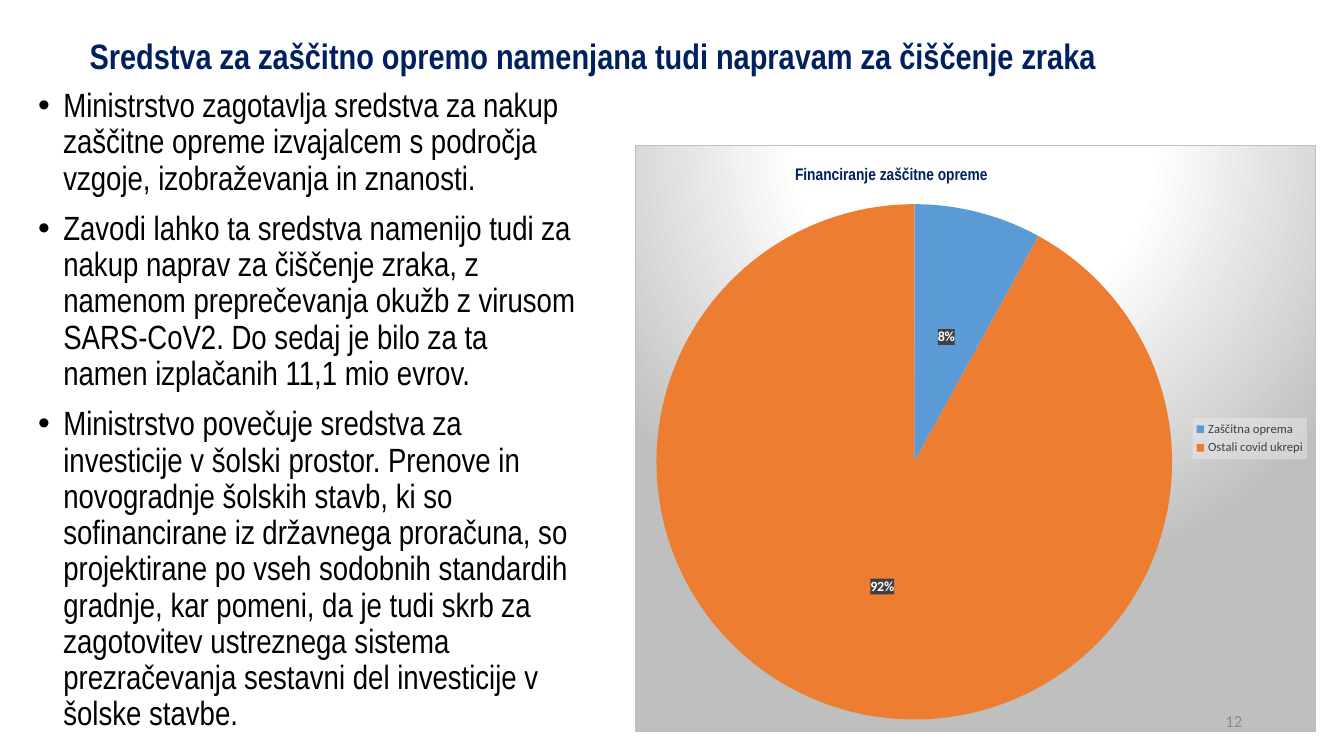
from lxml.etree import SubElement
from pptx import Presentation
from pptx.chart.data import CategoryChartData
from pptx.dml.color import RGBColor
from pptx.enum.chart import XL_CHART_TYPE, XL_LABEL_POSITION, XL_LEGEND_POSITION
from pptx.enum.text import MSO_ANCHOR, PP_ALIGN
from pptx.oxml import parse_xml
from pptx.oxml.ns import nsdecls, qn
from pptx.util import Inches, Pt

NAVY = RGBColor(0x00, 0x20, 0x60)
BLACK = RGBColor(0x00, 0x00, 0x00)
WHITE = RGBColor(0xFF, 0xFF, 0xFF)
GREY = RGBColor(0x8C, 0x8C, 0x8C)
CHARCOAL = RGBColor(0x40, 0x40, 0x40)
PALE = RGBColor(0xF2, 0xF2, 0xF2)
SILVER = RGBColor(0xBF, 0xBF, 0xBF)
BLUE = RGBColor(0x5B, 0x9B, 0xD5)
ORANGE = RGBColor(0xED, 0x7D, 0x31)
NARROW, PLAIN = "Arial Narrow", "Calibri"

HEADLINE = "Sredstva za zaščitno opremo namenjana tudi napravam za čiščenje zraka"
MEASURES = [
    "Ministrstvo zagotavlja sredstva za nakup zaščitne opreme izvajalcem s področja "
    "vzgoje, izobraževanja in znanosti.",
    "Zavodi lahko ta sredstva namenijo tudi za nakup naprav za čiščenje zraka, z namenom "
    "preprečevanja okužb z virusom SARS-CoV2. Do sedaj je bilo za ta namen izplačanih "
    "11,1 mio evrov.",
    "Ministrstvo povečuje sredstva za investicije v šolski prostor. Prenove in novogradnje "
    "šolskih stavb, ki so sofinancirane iz državnega proračuna, so projektirane po vseh "
    "sodobnih standardih gradnje, kar pomeni, da je tudi skrb za zagotovitev ustreznega "
    "sistema prezračevanja sestavni del investicije v šolske stavbe.",
]
FUNDING_TITLE = "Financiranje zaščitne opreme"
FUNDING = [("Zaščitna oprema", 8, BLUE), ("Ostali covid ukrepi", 92, ORANGE)]
PAGE = "12"

AREAS = {
    "headline": (0.79, 0.2, 10.67, 0.76),
    "measures": (0.28, 0.83, 5.53, 4.84),
    "funding": (6.3, 1.44, 6.75, 5.82),
    "page": (9.42, 6.95, 3, 0.4),
}


def area(name):
    return [Inches(length) for length in AREAS[name]]


def style(font, family, size, color, bold=False):
    font.name, font.size, font.bold = family, Pt(size), bold
    font.color.rgb = color


def add_text(slide, name, lines, look, anchor=MSO_ANCHOR.MIDDLE):
    frame = slide.shapes.add_textbox(*area(name)).text_frame
    frame.word_wrap = True
    frame.vertical_anchor = anchor
    frame.text = "\n".join(lines)
    for paragraph in frame.paragraphs:
        style(paragraph.font, *look)
    return frame.paragraphs


def add_bullet(paragraph):
    paragraph.line_spacing = 0.9
    paragraph.space_before = Pt(10)
    properties = paragraph._p.get_or_add_pPr()
    properties.set("marL", str(Inches(0.25)))
    properties.set("indent", str(-Inches(0.25)))
    bullet_font = parse_xml(f'<a:buFont {nsdecls("a")} typeface="Arial"/>')
    bullet = parse_xml(f'<a:buChar {nsdecls("a")} char="•"/>')
    spacing = properties.find(qn("a:spcBef"))
    spacing.addnext(bullet_font)
    bullet_font.addnext(bullet)


def paint(part, fill):
    backing = parse_xml(f'<c:spPr {nsdecls("c", "a")}>{fill}</c:spPr>')
    part.find(qn("c:txPr")).addprevious(backing)


def solid(color, percent):
    return (f'<a:solidFill><a:srgbClr val="{color}"><a:alpha val="{percent * 1000}"/>'
            '</a:srgbClr></a:solidFill>')


def spotlight():
    stops = "".join(
        f'<a:gs pos="{percent * 1000}"><a:srgbClr val="{color}"/></a:gs>'
        for percent, color in [(0, WHITE), (39, WHITE), (100, SILVER)]
    )
    return (f'<a:gradFill><a:gsLst>{stops}</a:gsLst><a:path path="circle">'
            '<a:fillToRect l="50000" t="-80000" r="50000" b="180000"/></a:path></a:gradFill>'
            f'<a:ln w="{Pt(0.75)}">{solid(SILVER, 100)}</a:ln>')


def place(part, index, **shares):
    for old in part.findall(qn("c:layout")):
        part.remove(old)
    layout = parse_xml(f'<c:layout {nsdecls("c")}><c:manualLayout/></c:layout>')
    manual = layout[0]
    if "w" in shares:
        SubElement(manual, qn("c:layoutTarget")).set("val", "inner")
    for mode in ("xMode", "yMode"):
        SubElement(manual, qn(f"c:{mode}")).set("val", "edge")
    for side, share in shares.items():
        SubElement(manual, qn(f"c:{side}")).set("val", str(share))
    part.insert(index, layout)


def add_funding(slide):
    data = CategoryChartData()
    data.categories = [name for name, _, _ in FUNDING]
    data.add_series("Series 1", [share for _, share, _ in FUNDING])
    chart = slide.shapes.add_chart(XL_CHART_TYPE.PIE, *area("funding"), data).chart
    style(chart.font, PLAIN, 10, BLACK)

    chart.has_title = True
    title = chart.chart_title.text_frame
    title.text = FUNDING_TITLE
    style(title.paragraphs[0].font, NARROW, 12, NAVY, True)

    chart.has_legend = True
    chart.legend.position = XL_LEGEND_POSITION.RIGHT
    chart.legend.include_in_layout = False
    style(chart.legend.font, PLAIN, 9, CHARCOAL)

    pie = chart.plots[0]
    pie.vary_by_categories = True
    for index, (_, _, color) in enumerate(FUNDING):
        slice_fill = pie.series[0].points[index].format.fill
        slice_fill.solid()
        slice_fill.fore_color.rgb = color

    pie.has_data_labels = True
    labels = pie.data_labels
    labels.show_percentage, labels.show_value = True, False
    labels.number_format, labels.number_format_is_linked = "0%", False
    labels.position = XL_LABEL_POSITION.CENTER
    style(labels.font, PLAIN, 10, WHITE, True)

    root = chart.element
    paint(root, spotlight())
    paint(root.find(".//" + qn("c:legend")), solid(PALE, 39))
    paint(root.find(".//" + qn("c:dLbls")), solid(CHARCOAL, 90))
    place(root.find(".//" + qn("c:title")), 1, x=0.23, y=0.03)
    place(root.find(".//" + qn("c:plotArea")), 0, x=0.03, y=0.1, w=0.76, h=0.88)


def main():
    deck = Presentation()
    deck.slide_width, deck.slide_height = Inches(13.33), Inches(7.5)
    slide = deck.slides.add_slide(deck.slide_layouts[6])

    headline = add_text(slide, "headline", [HEADLINE], (NARROW, 25.2, NAVY, True))
    headline[0].line_spacing = 0.9
    for measure in add_text(slide, "measures", MEASURES, (NARROW, 24, BLACK), MSO_ANCHOR.TOP):
        add_bullet(measure)
    add_funding(slide)
    page = add_text(slide, "page", [PAGE], (PLAIN, 12, GREY))
    page[0].alignment = PP_ALIGN.RIGHT

    deck.save("out.pptx")


if __name__ == "__main__":
    main()
